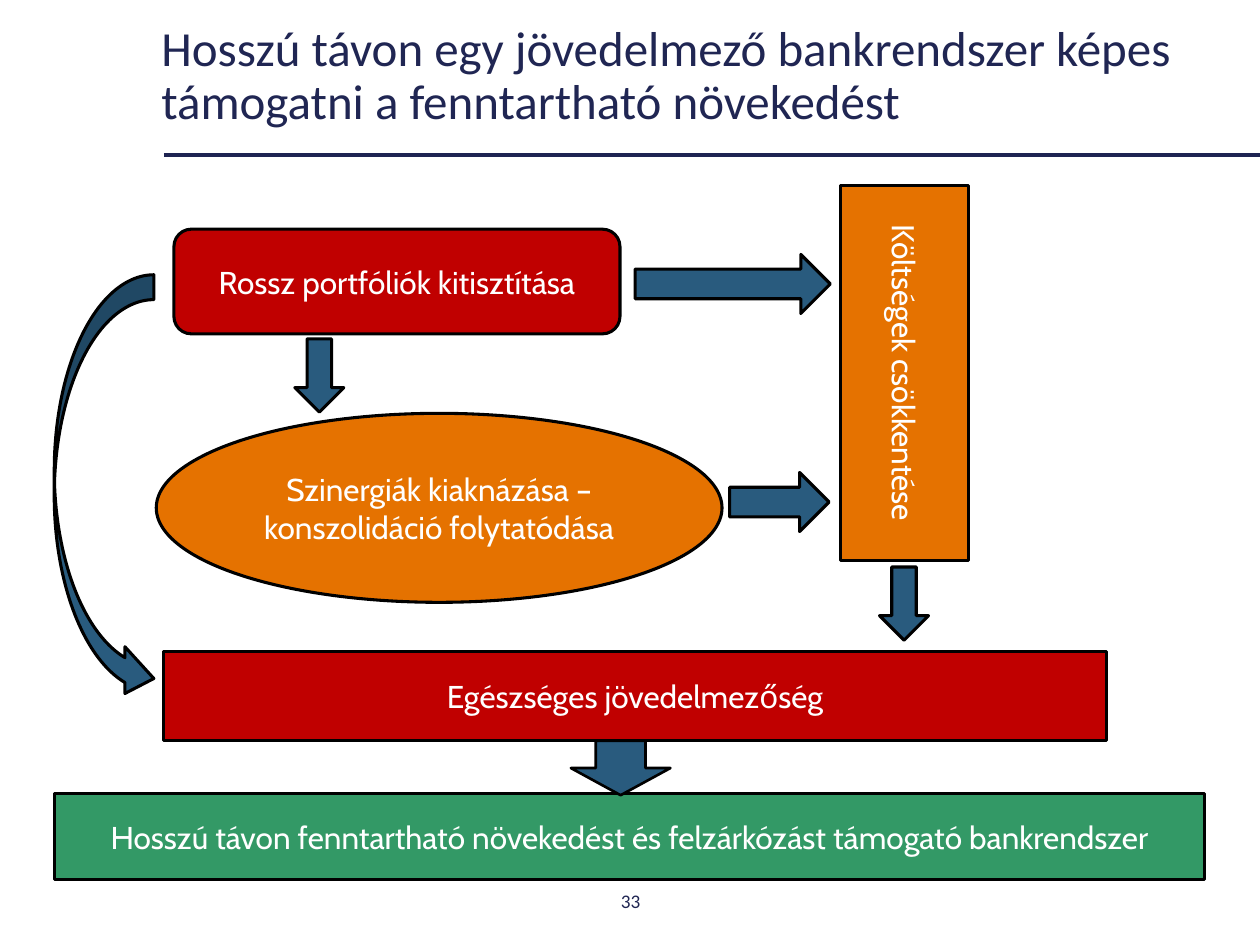
from lxml.etree import SubElement
from pptx import Presentation
from pptx.dml.color import RGBColor
from pptx.enum.shapes import MSO_CONNECTOR, MSO_SHAPE
from pptx.enum.text import MSO_ANCHOR, PP_ALIGN
from pptx.oxml.ns import qn
from pptx.util import Pt

NAVY = RGBColor(0x20, 0x26, 0x53)
RULE = RGBColor(0x1E, 0x24, 0x52)
ORANGE = RGBColor(0xE5, 0x72, 0x00)
RED = RGBColor(0xC0, 0x00, 0x00)
GREEN = RGBColor(0x33, 0x99, 0x66)
BLUE = RGBColor(0x29, 0x5B, 0x7E)
BLACK = RGBColor(0, 0, 0)
WHITE = RGBColor(0xFF, 0xFF, 0xFF)

# Kind, fill, text, box within the diagram
STEPS = [
    (MSO_SHAPE.OVAL, ORANGE, "Szinergiák kiaknázása – konszolidáció folytatódása",
     (58.3, 130.4, 323.3, 108)),
    (MSO_SHAPE.ROUNDED_RECTANGLE, RED, "Rossz portfóliók kitisztítása",
     (68.4, 25.2, 254.9, 59.8)),
    (MSO_SHAPE.RECTANGLE, RED, "Egészséges jövedelmezőség",
     (62.6, 266.4, 538.6, 51.1)),
    (MSO_SHAPE.RECTANGLE, GREEN,
     "Hosszú távon fenntartható növekedést és felzárkózást támogató bankrendszer",
     (0, 347.8, 657.4, 49)),
]
COSTS = (MSO_SHAPE.RECTANGLE, ORANGE, "Költségek csökkentése",
         (449.2, 0, 73.4, 214.6))

# Kind, box within the diagram, line width
ARROWS = [
    (MSO_SHAPE.DOWN_ARROW, (471.6, 218.2, 28, 41.8), 1.75),
    (MSO_SHAPE.RIGHT_ARROW, (331.9, 39.6, 111.6, 33.8), 1.75),
    (MSO_SHAPE.DOWN_ARROW, (137.5, 87.9, 28, 41.8), 1.75),
    (MSO_SHAPE.RIGHT_ARROW, (385.9, 164.2, 56.9, 33.8), 1.75),
    (MSO_SHAPE.DOWN_ARROW, (295.2, 317.6, 56.9, 31), 1.5),
]
RETURN_ARROW = (MSO_SHAPE.CURVED_RIGHT_ARROW, (0, 51.2, 56.9, 244.1), 1.75)


def style_text(tf, text, font, size, color, align=None):
    tf.word_wrap = True
    tf.vertical_anchor = MSO_ANCHOR.MIDDLE
    tf.text = text
    p = tf.paragraphs[0]
    p.alignment = align
    f = p.runs[0].font
    f.name, f.size, f.color.rgb = font, Pt(size), color


def add_block(s, origin, kind, fill, box, width=1.75):
    x, y, w, h = box
    sp = s.shapes.add_shape(kind, Pt(origin[0] + x), Pt(origin[1] + y), Pt(w), Pt(h))
    sp.shadow.inherit = False
    sp.fill.solid()
    sp.fill.fore_color.rgb = fill
    sp.line.color.rgb = BLACK
    sp.line.width = Pt(width)
    return sp


def add_step(s, origin, kind, fill, text, box):
    sp = add_block(s, origin, kind, fill, box)
    style_text(sp.text_frame, text, "Cabin", 18, WHITE, PP_ALIGN.CENTER)
    return sp


def add_header(s, x, y, w, h):
    # Title
    title = s.shapes.title
    title.left, title.top, title.width, title.height = Pt(x), Pt(y), Pt(w), Pt(h)
    style_text(title.text_frame,
               "Hosszú távon egy jövedelmező bankrendszer képes "
               "támogatni a fenntartható növekedést",
               "Calibri", 28, NAVY, PP_ALIGN.LEFT)
    title.text_frame.paragraphs[0].line_spacing = 0.9

    # Rule below the title, out to the slide edge
    rule_y = Pt(y + h + 14.4)
    rule = s.shapes.add_connector(MSO_CONNECTOR.STRAIGHT, Pt(x + 8.6), rule_y,
                                  Pt(720), rule_y)
    rule.line.color.rgb = RULE
    rule.line.width = Pt(2.25)
    SubElement(rule.element.spPr, qn("a:effectLst"))


def add_diagram(s, x, y):
    origin = (x, y)
    for step in STEPS:
        add_step(s, origin, *step)

    # Column with rotated text
    costs = add_step(s, origin, *COSTS)
    costs.element.txBody.bodyPr.set("vert", "vert")

    # Arrows
    for kind, box, width in ARROWS:
        add_block(s, origin, kind, BLUE, box, width)
    kind, box, width = RETURN_ARROW
    curve = add_block(s, origin, kind, BLUE, box, width)
    for i, value in enumerate((0.25, 0.47, 0.29)):
        curve.adjustments[i] = value


def add_page_number(s, x, y, w, h):
    box = s.shapes.add_textbox(Pt(x), Pt(y), Pt(w), Pt(h))
    style_text(box.text_frame, "33", "Calibri", 11, NAVY, PP_ALIGN.CENTER)


def main():
    prs = Presentation()
    prs.slide_width, prs.slide_height = Pt(720), Pt(540)
    s = prs.slides.add_slide(prs.slide_layouts[5])
    add_header(s, 85, 14.4, 614.9, 59.8)
    add_diagram(s, 31, 105.8)
    add_page_number(s, 279.4, 500.4, 162, 28.8)
    prs.save("out.pptx")


if __name__ == "__main__":
    main()
